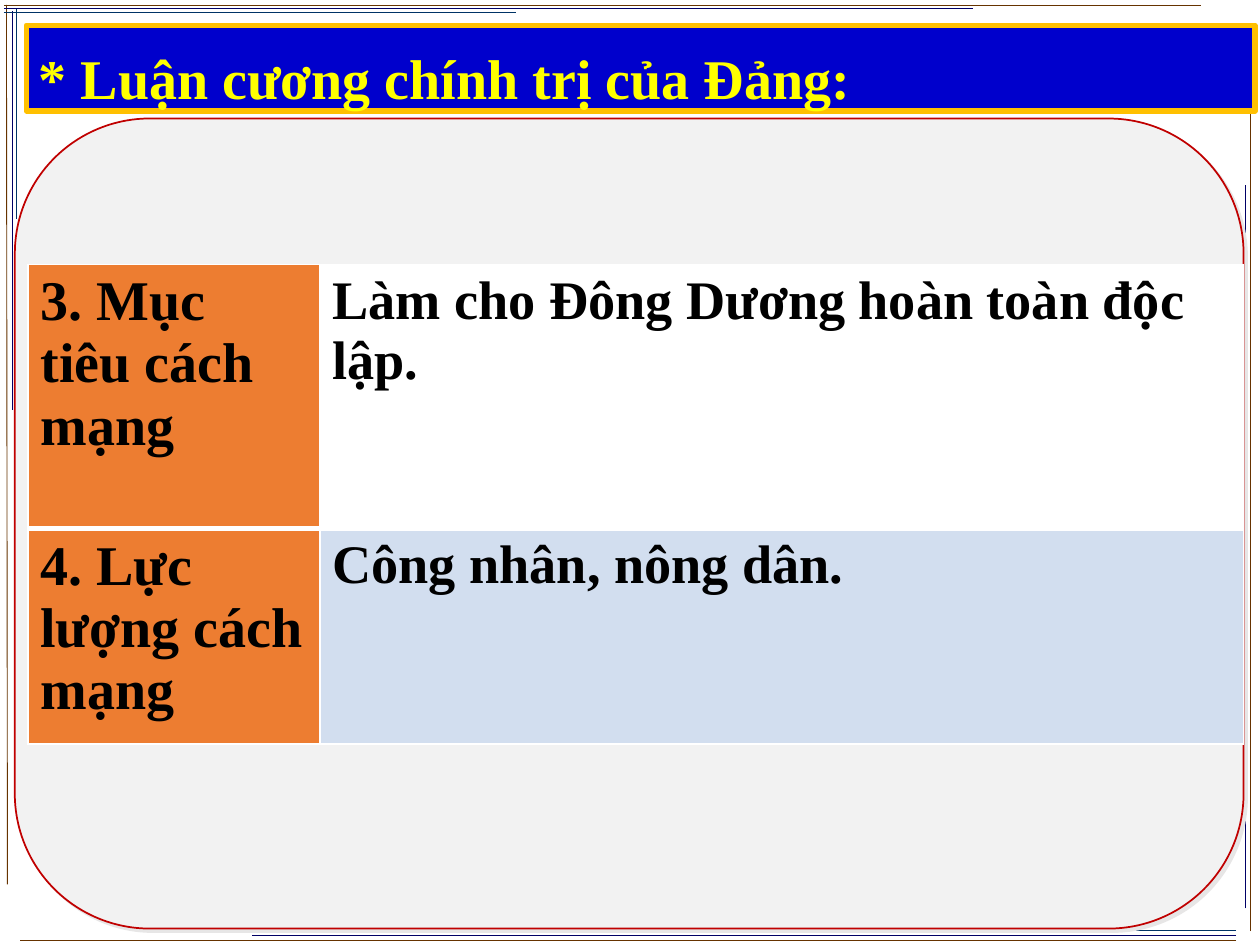
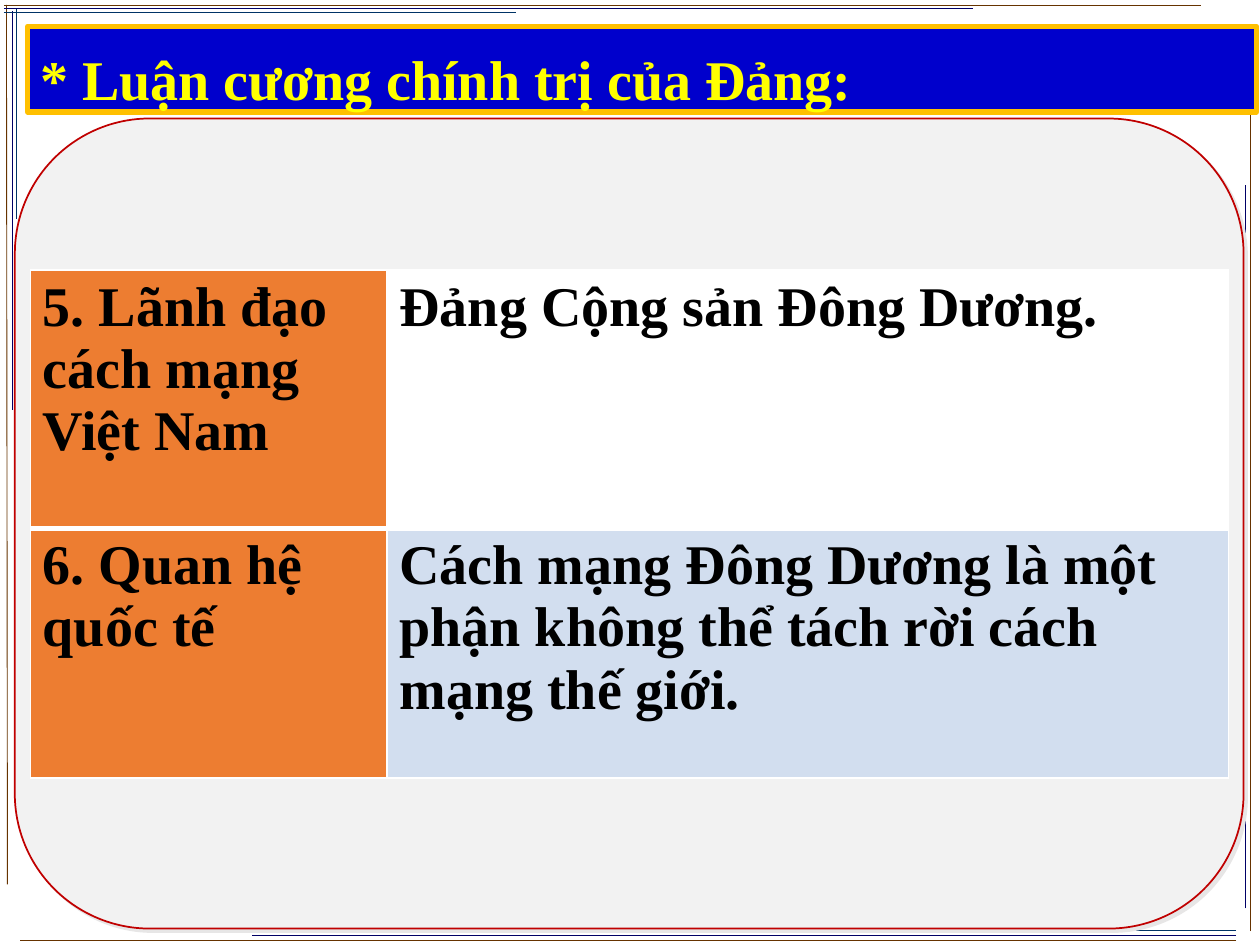
"""Build two slides on the political theses: a framed title and a two-row table each."""
from lxml import etree
from pptx import Presentation
from pptx import util as u
from pptx.dml.color import RGBColor
from pptx.enum import shapes, text
from pptx.oxml.ns import qn

FONT = "Times New Roman"
BROWN, NAVY, TEAL = "663300", "000066", "003366"
WHITE, BLACK, ORANGE, PALE = "FFFFFF", "000000", "ED7D31", "D2DEEF"
TITLE = "* Luận cương chính trị của Đảng:"

FRAME = {
    BROWN: [(0.13, 0.1, 0.15, 17.83), (0.08, 0.1, 24.21, 0.1),
            (25.2, 18.77, 25.2, 0.74), (24.92, 18.95, 0.41, 18.95)],
    NAVY: [(0.25, 0.23, 0.25, 8.26), (0.08, 0.18, 19.61, 0.18),
           (25.1, 18.31, 25.1, 3.73), (24.92, 18.85, 5.08, 18.85)],
    TEAL: [(0.33, 0.18, 0.33, 4.42), (0.08, 0.25, 10.41, 0.25),
           (24.92, 18.75, 14.43, 18.75)],
}


def tint(code):
    """Turn a hex string into a colour."""
    return RGBColor.from_string(code)


def write(frame, words, size=32, color=BLACK, bold=True, lead=None):
    """Put one left-aligned paragraph into a text frame."""
    frame.word_wrap = True
    para = frame.paragraphs[0]
    para.alignment = text.PP_ALIGN.LEFT
    if lead:
        para.line_spacing = lead
    run = para.add_run()
    run.text = words
    run.font.name, run.font.size, run.font.bold = FONT, u.Pt(size), bold
    run.font.color.rgb = tint(color)


def draw_line(slide, ends, color):
    """Draw one thin straight line."""
    line = slide.shapes.add_connector(
        shapes.MSO_CONNECTOR.STRAIGHT, *map(u.Cm, ends))
    line.line.color.rgb = tint(color)
    line.line.width = u.Pt(0.5)
    etree.SubElement(line._element.spPr, qn("a:effectLst"))


def draw_box(slide, kind, place, fill, edge, width):
    """Draw a filled and outlined shape without a shadow."""
    box = slide.shapes.add_shape(kind, *map(u.Cm, place))
    box.shadow.inherit = False
    box.fill.solid()
    box.fill.fore_color.rgb = tint(fill)
    box.line.color.rgb = tint(edge)
    box.line.width = u.Pt(width)
    return box


def cast_shade(box, color):
    """Give a shape a hard shadow to the lower right."""
    effects = box._element.spPr.find(qn("a:effectLst"))
    shade = etree.SubElement(effects, qn("a:outerShdw"), dist=str(u.Pt(2.8)),
                             dir="2700000", algn="ctr", rotWithShape="0")
    etree.SubElement(shade, qn("a:srgbClr"), val=color)


def edge_cell(cell, **widths):
    """Set white borders on a cell, by side and width in points."""
    props = cell._tc.get_or_add_tcPr()
    for side in "LRTB":
        line = etree.SubElement(props, qn("a:ln" + side),
                                w=str(u.Pt(widths.get(side, 1))))
        fill = etree.SubElement(line, qn("a:solidFill"))
        etree.SubElement(fill, qn("a:srgbClr"), val=WHITE)


def add_grid(slide, left, top, cols, rows, lines, sizes):
    """Add the table of headings and their answers."""
    grid = slide.shapes.add_table(
        len(rows), len(cols), u.Cm(left), u.Cm(top),
        u.Cm(sum(cols)), u.Cm(sum(rows))).table
    grid.first_row = grid.horz_banding = False
    for col, width in zip(grid.columns, cols):
        col.width = u.Cm(width)
    fills = [(ORANGE, WHITE), (ORANGE, PALE)]
    rules = [{"B": 3}, {"T": 3}]
    for r, height in enumerate(rows):
        grid.rows[r].height = u.Cm(height)
        for c, words in enumerate(lines[r]):
            cell = grid.cell(r, c)
            edge_cell(cell, **rules[r])
            cell.fill.solid()
            cell.fill.fore_color.rgb = tint(fills[r][c])
            write(cell.text_frame, words, size=sizes[c])


def add_page(deck, left, top):
    """Add a slide with its frame lines, panel and title band."""
    slide = deck.slides.add_slide(deck.slide_layouts[6])
    for color, lines in FRAME.items():
        for ends in lines:
            draw_line(slide, ends, color)
    kinds = shapes.MSO_SHAPE
    panel = draw_box(slide, kinds.ROUNDED_RECTANGLE,
                     (0.3, 2.39, 24.77, 16.33), "F2F2F2", "C00000", 1)
    cast_shade(panel, "E7E6E6")
    band = draw_box(slide, kinds.RECTANGLE, (left, top, 24.77, 1.73),
                    "0000CC", "FFC000", 3)
    frame = band.text_frame
    frame.vertical_anchor = text.MSO_ANCHOR.TOP
    frame.margin_top, frame.margin_bottom = u.Cm(0.28), 0
    write(frame, TITLE, color="FFFF00", lead=1.07)
    return slide


def main():
    """Build both slides and save them."""
    deck = Presentation()
    deck.slide_width, deck.slide_height = u.Cm(25.4), u.Cm(19.05)
    aims = add_page(deck, 0.53, 0.51)
    add_grid(aims, 0.56, 5.33, (5.89, 18.62), (5.33, 4.34), [
        ("3. Mục tiêu cách mạng", "Làm cho Đông Dương hoàn toàn độc lập."),
        ("4. Lực lượng cách mạng", "Công nhân, nông dân."),
    ], (32, 31))
    ties = add_page(deck, 0.56, 0.53)
    add_grid(ties, 0.61, 5.44, (7.19, 16.97), (5.21, 5.03), [
        ("5. Lãnh đạo cách mạng Việt Nam", "Đảng Cộng sản Đông Dương."),
        ("6. Quan hệ quốc tế",
         "Cách mạng Đông Dương là một phận không thể tách rời cách mạng thế giới."),
    ], (32, 32))
    deck.save("out.pptx")


if __name__ == "__main__":
    main()
